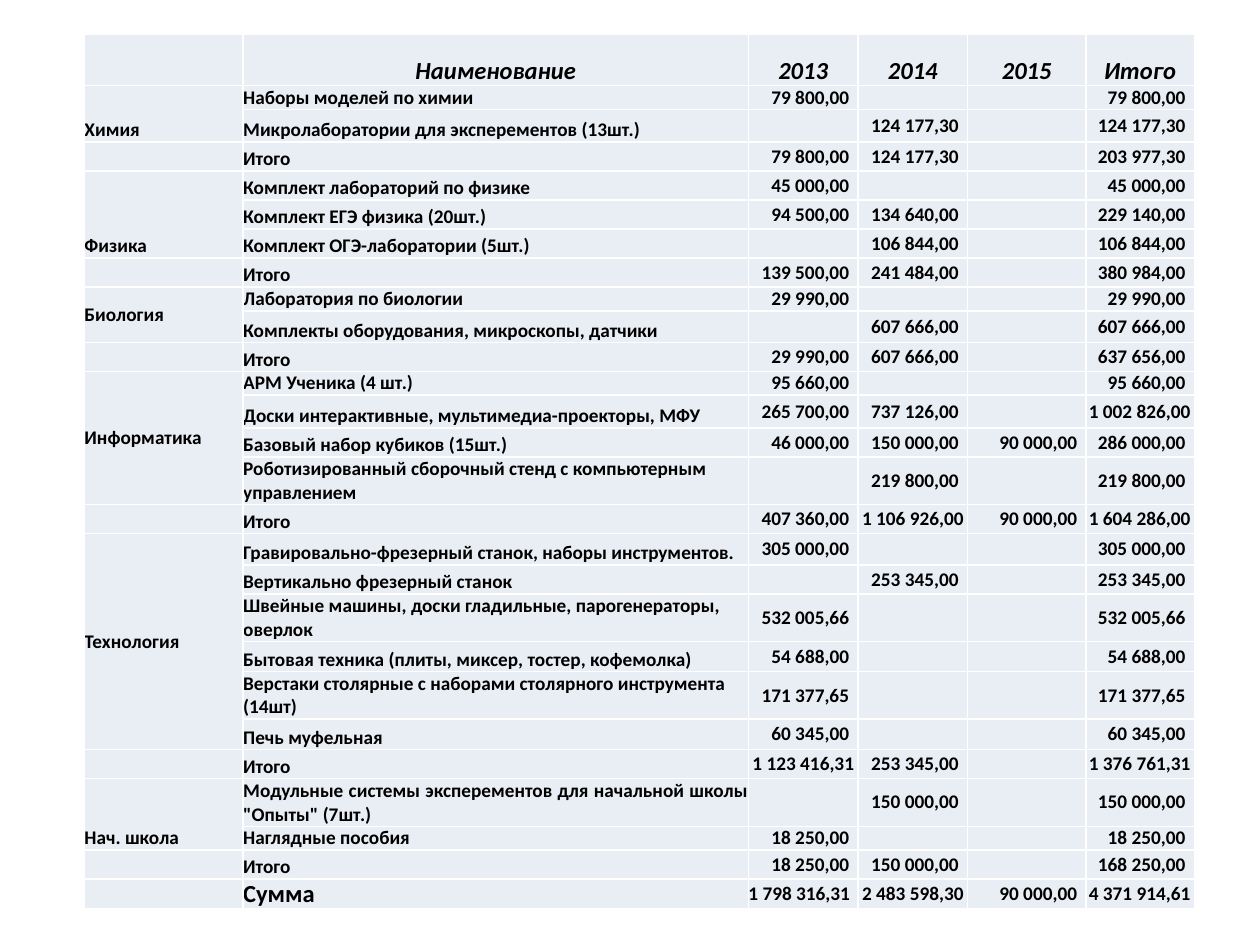
from lxml import etree
from pptx import Presentation
from pptx.dml.color import RGBColor
from pptx.enum.text import MSO_ANCHOR as ANCHOR, PP_ALIGN as ALIGN
from pptx.oxml.ns import qn
from pptx.util import Inches, Pt

CELL_FILL = RGBColor(0xE9, 0xED, 0xF4)
WHITE = RGBColor(0xFF, 0xFF, 0xFF)
BLACK = RGBColor(0x00, 0x00, 0x00)

COL_WIDTHS = [1.26, 4.01, 0.87, 0.87, 0.94, 0.86]
ROW_HEIGHTS = [0.41, 0.13, 0.26, 0.23, 0.23, 0.23, 0.23, 0.23, 0.18,
               0.25, 0.23, 0.18, 0.26, 0.23, 0.34, 0.23, 0.25, 0.23,
               0.34, 0.24, 0.34, 0.24, 0.23, 0.38, 0.18, 0.23, 0.23]

HEADER = ["", "Наименование", "2013", "2014", "2015", "Итого"]

# Subject, its anchor, then its items: name, 2013, 2014, 2015, total
SUBJECTS = [
    ("Химия", ANCHOR.BOTTOM, [
        ("Наборы моделей по химии", "79 800,00", "", "", "79 800,00"),
        ("Микролаборатории для эксперементов (13шт.)", "", "124 177,30", "", "124 177,30"),
        ("Итого", "79 800,00", "124 177,30", "", "203 977,30")]),
    ("Физика", ANCHOR.BOTTOM, [
        ("Комплект лабораторий по физике", "45 000,00", "", "", "45 000,00"),
        ("Комплект ЕГЭ физика (20шт.)", "94 500,00", "134 640,00", "", "229 140,00"),
        ("Комплект ОГЭ-лаборатории (5шт.)", "", "106 844,00", "", "106 844,00"),
        ("Итого", "139 500,00", "241 484,00", "", "380 984,00")]),
    ("Биология", ANCHOR.MIDDLE, [
        ("Лаборатория по биологии", "29 990,00", "", "", "29 990,00"),
        ("Комплекты оборудования, микроскопы, датчики", "", "607 666,00", "", "607 666,00"),
        ("Итого", "29 990,00", "607 666,00", "", "637 656,00")]),
    ("Информатика", ANCHOR.MIDDLE, [
        ("АРМ Ученика (4 шт.)", "95 660,00", "", "", "95 660,00"),
        ("Доски интерактивные, мультимедиа-проекторы, МФУ",
         "265 700,00", "737 126,00", "", "1 002 826,00"),
        ("Базовый набор кубиков (15шт.)", "46 000,00", "150 000,00", "90 000,00", "286 000,00"),
        ("Роботизированный сборочный стенд с компьютерным управлением",
         "", "219 800,00", "", "219 800,00"),
        ("Итого", "407 360,00", "1 106 926,00", "90 000,00", "1 604 286,00")]),
    ("Технология", ANCHOR.MIDDLE, [
        ("Гравировально-фрезерный станок, наборы инструментов.",
         "305 000,00", "", "", "305 000,00"),
        ("Вертикально фрезерный станок", "", "253 345,00", "", "253 345,00"),
        ("Швейные машины, доски гладильные, парогенераторы, оверлок",
         "532 005,66", "", "", "532 005,66"),
        ("Бытовая техника (плиты, миксер, тостер, кофемолка)",
         "54 688,00", "", "", "54 688,00"),
        ("Верстаки столярные с наборами столярного инструмента (14шт)",
         "171 377,65", "", "", "171 377,65"),
        ("Печь муфельная", "60 345,00", "", "", "60 345,00"),
        ("Итого", "1 123 416,31", "253 345,00", "", "1 376 761,31")]),
    ("Нач. школа", ANCHOR.BOTTOM, [
        ("Модульные системы эксперементов для начальной школы \"Опыты\" (7шт.)",
         "", "150 000,00", "", "150 000,00"),
        ("Наглядные пособия", "18 250,00", "", "", "18 250,00"),
        ("Итого", "18 250,00", "150 000,00", "", "168 250,00")]),
]
GRAND_TOTAL = ("Сумма", "1 798 316,31", "2 483 598,30", "90 000,00", "4 371 914,61")

LEFT_ROWS = {2, 9, 12, 14, 16, 18, 19, 20, 21}  # names that are not justified
MIDDLE_NAME_ROW = 18


def style_cell(cell):
    """White borders, pale fill and no margins."""
    tc_pr = cell._tc.get_or_add_tcPr()
    for side in ("lnL", "lnR", "lnT", "lnB"):
        ln = etree.SubElement(tc_pr, qn("a:" + side), w=str(Pt(1)))
        fill = etree.SubElement(ln, qn("a:solidFill"))
        etree.SubElement(fill, qn("a:srgbClr"), val=str(WHITE))
    cell.fill.solid()
    cell.fill.fore_color.rgb = CELL_FILL
    cell.margin_left = cell.margin_right = cell.margin_top = cell.margin_bottom = 0
    # Keeps empty cells from stretching their row
    etree.SubElement(cell.text_frame.paragraphs[0]._p, qn("a:endParaRPr"), sz="1100")


def write(cell, text, align, anchor, size=11, italic=False):
    if not text:
        return
    cell.text_frame.text = text
    cell.vertical_anchor = anchor
    p = cell.text_frame.paragraphs[0]
    p.alignment = align
    font = p.runs[0].font
    font.name, font.size = "Calibri", Pt(size)
    font.bold, font.italic = True, italic
    font.color.rgb = BLACK


prs = Presentation()
prs.slide_width, prs.slide_height = Inches(10), Inches(7.5)
s = prs.slides.add_slide(prs.slide_layouts[6])

# Table grid
table = s.shapes.add_table(len(ROW_HEIGHTS), len(COL_WIDTHS), Inches(0.67), Inches(0.27),
                           Inches(sum(COL_WIDTHS)), Inches(sum(ROW_HEIGHTS))).table
table.first_row = table.horz_banding = False
for col, width in zip(table.columns, COL_WIDTHS):
    col.width = Inches(width)
for row, height in zip(table.rows, ROW_HEIGHTS):
    row.height = Inches(height)
for cell in table.iter_cells():
    style_cell(cell)

# Header row
for c, title in enumerate(HEADER):
    write(table.cell(0, c), title, ALIGN.CENTER, ANCHOR.BOTTOM, 14, True)

# Subject cells, merged over their items but not over the subtotal
lines = []
for subject, anchor, items in SUBJECTS:
    first = len(lines) + 1
    lines += items
    table.cell(first, 0).merge(table.cell(len(lines) - 1, 0))
    write(table.cell(first, 0), subject, ALIGN.JUSTIFY, anchor)
lines.append(GRAND_TOTAL)

# Names and amounts
for r, (name, *amounts) in enumerate(lines, start=1):
    is_last = r == len(lines)
    write(table.cell(r, 1), name,
          ALIGN.LEFT if r in LEFT_ROWS else ALIGN.JUSTIFY,
          ANCHOR.MIDDLE if r == MIDDLE_NAME_ROW else ANCHOR.BOTTOM,
          14 if is_last else 11)
    for c, amount in enumerate(amounts, start=2):
        cell = table.cell(r, c)
        justified = is_last and c == 2
        write(cell, amount, ALIGN.JUSTIFY if justified else ALIGN.RIGHT, ANCHOR.MIDDLE)
        # Amounts in millions nearly fill the column
        cell.margin_right = Inches(0.03 if len(amount) > 10 else 0.07)

prs.save("out.pptx")
